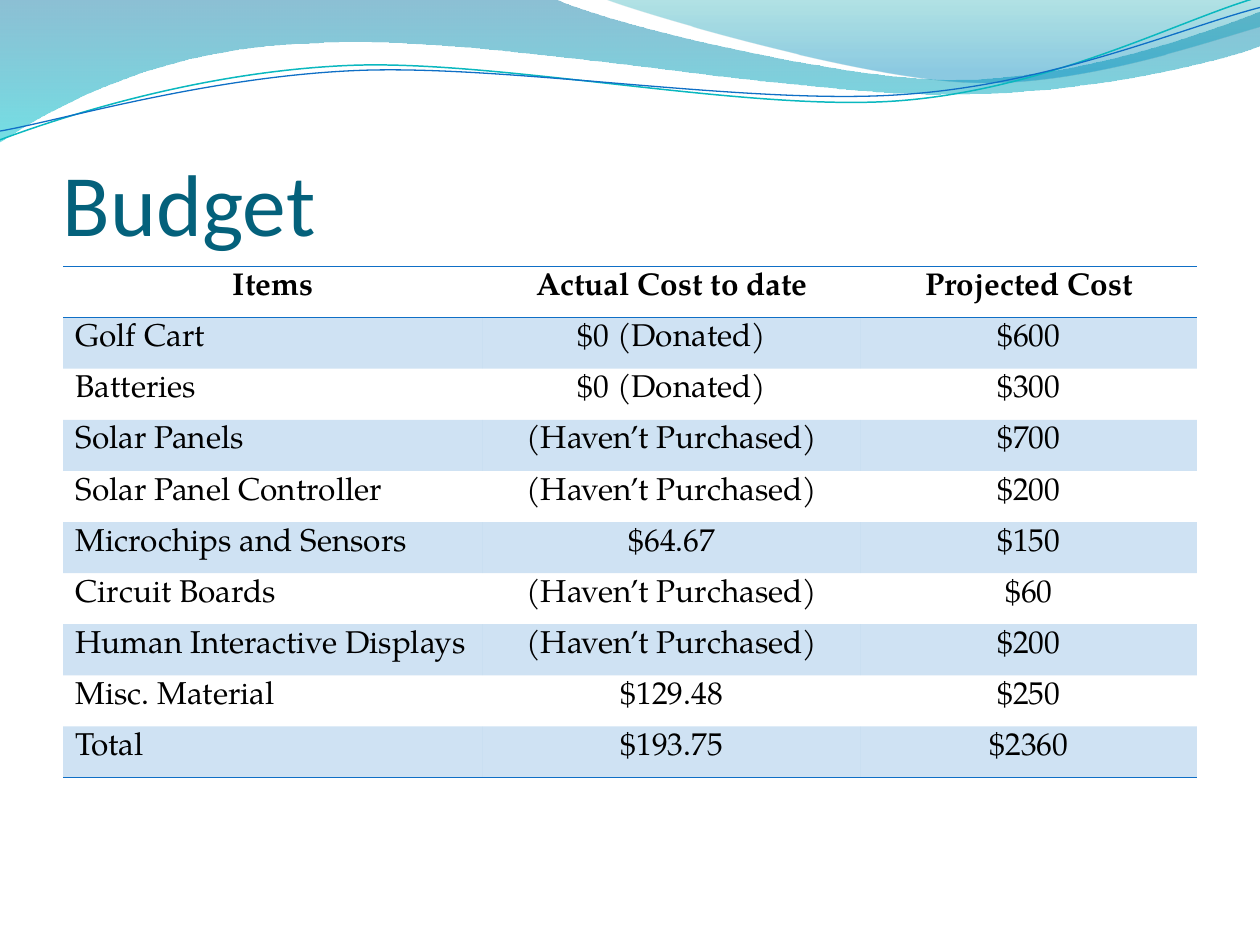
from math import cos, radians, sin
from lxml.etree import SubElement
from pptx import Presentation
from pptx.dml.color import RGBColor
from pptx.enum.text import MSO_ANCHOR, PP_ALIGN
from pptx.oxml.ns import qn
from pptx.util import Pt

BLUE = "0F6FC6"
PLAIN_TABLE = "{2D5ABB26-0587-4C30-8999-92F81FD0307C}"
TILT = -2.7

BANDS = [
    ([(0, 0), (316.8, -0.7), (342.7, 12.2, 478.1, 45.4, 545.8, 45.4),
      (614.2, 45.4, 689.8, 18.7, 720, 6.5), (720.7, 25.9),
      (707.8, 31.7, 626.4, 54.7, 537.1, 54), (447.8, 54, 275, 20.2, 185, 24.5),
      (92.9, 25.9, 33.1, 59.8, -0.7, 81.4)],
     [(0, "0074A1", 45), (1, "00C6CF", 55)]),
    ([(344.9, -0.7), (366.5, 7.9, 491, 44.6, 553.7, 46.8),
      (616.3, 49.7, 691.9, 23, 720, 15.1), (720, 0)],
     [(0, "00A1A9", 30), (0.8, "008BBF", 45)]),
]
STRANDS = [
    ([(0, 79.9), (34.6, 67, 113.8, 41, 199.4, 37.4),
      (284.4, 33.8, 427, 64.1, 513.4, 57.6),
      (599.8, 51.1, 675.4, 10.8, 718.6, -1.4)], (359.3, 41.4), "0AB8BF", 0.85),
    ([(0, 74.9), (33.8, 69.1, 118.1, 43.9, 203.8, 40.3),
      (290.2, 36.7, 429.8, 60.5, 516.2, 54),
      (601.9, 48.2, 677.5, 15.1, 720, 4.3)], (359.6, 42.5), BLUE, 0.75),
]
COLUMN_WIDTHS = [240, 216, 192]
BUDGET = [
    ("Items", "Actual Cost to date", "Projected Cost"),
    ("Golf Cart", "$0 (Donated)", "$600"),
    ("Batteries", "$0 (Donated)", "$300"),
    ("Solar Panels", "(Haven’t Purchased)", "$700"),
    ("Solar Panel Controller", "(Haven’t Purchased)", "$200"),
    ("Microchips and Sensors", "$64.67", "$150"),
    ("Circuit Boards", "(Haven’t Purchased)", "$60"),
    ("Human Interactive Displays", "(Haven’t Purchased)", "$200"),
    ("Misc. Material", "$129.48", "$250"),
    ("Total", "$193.75", "$2360"),
]
TITLE_FONT = {"name": "Calibri", "size": Pt(50), "bold": False}
CELL_FONT = {"name": "TeX Gyre Pagella", "size": Pt(18), "bold": False}
HEADER_FONT = {**CELL_FONT, "bold": True}


def color(value):
    return RGBColor.from_string(value)


def apply(target, values):
    for name, value in values.items():
        setattr(target, name, value)


def set_alpha(color_element, percent):
    SubElement(color_element, qn("a:alpha"), val=str(percent * 1000))


def write(frame, text, font, ink, align):
    para = frame.paragraphs[0]
    para.alignment = align
    span = para.add_run()
    span.text = text
    apply(span.font, font)
    span.font.color.rgb = color(ink)


def pairs(step):
    return list(zip(step[::2], step[1::2]))


def turn(path, center, angle):
    across, up = cos(radians(angle)), sin(radians(angle))
    turned = []
    for step in path:
        offsets = [(x - center[0], y - center[1]) for x, y in pairs(step)]
        turned.append(tuple(value for x, y in offsets for value in (
            center[0] + x * across - y * up, center[1] + x * up + y * across)))
    return turned


def bend(shape, steps):
    lines = iter(list(shape.element.spPr.iter(qn("a:lnTo"))))
    for step in steps:
        group = [next(lines) for _ in pairs(step)]
        if len(group) == 3:
            curve = group[0].makeelement(qn("a:cubicBezTo"), {})
            group[0].addprevious(curve)
            for line in group:
                curve.append(line[0])
                line.getparent().remove(line)


def add_outline(page, box, path, close):
    points = [(Pt(x), Pt(y)) for step in path for x, y in pairs(step)]
    builder = page.shapes.build_freeform(*points[0])
    builder.add_line_segments(points[1:], close=close)
    shape = builder.convert_to_shape(Pt(box[0]), Pt(box[1]))
    bend(shape, path[1:])
    shape.shadow.inherit = False
    return shape


def add_waves(page, box):
    for path, stops in BANDS:
        band = add_outline(page, box, path, True)
        band.line.fill.background()
        band.fill.gradient()
        band.fill.gradient_angle = 270
        for stop, (position, shade, alpha) in zip(band.fill.gradient_stops, stops):
            stop.position = position
            stop.color.rgb = color(shade)
        marks = list(band.element.spPr.iter(qn("a:srgbClr")))
        for mark, (position, shade, alpha) in zip(marks, stops):
            set_alpha(mark, alpha)
    for path, center, shade, width in STRANDS:
        strand = add_outline(page, box, turn(path, center, -TILT), False)
        strand.rotation = TILT
        strand.fill.background()
        strand.line.color.rgb = color(shade)
        strand.line.width = Pt(width)


def add_title(page, box):
    frame = page.shapes.add_textbox(*map(Pt, box)).text_frame
    apply(frame, {"word_wrap": True, "vertical_anchor": MSO_ANCHOR.BOTTOM,
                  "margin_left": 0, "margin_right": 0,
                  "margin_top": Pt(3.6), "margin_bottom": 0})
    write(frame, "Budget", TITLE_FONT, "04617B", PP_ALIGN.LEFT)


def add_border(cell, side, index):
    properties = cell._tc.get_or_add_tcPr()
    line = properties.makeelement(qn(f"a:{side}"), {"w": str(Pt(1))})
    SubElement(SubElement(line, qn("a:solidFill")), qn("a:srgbClr"), val=BLUE)
    properties.insert(index, line)


def style_cell(cell, banded, sides):
    if banded:
        cell.fill.solid()
        cell.fill.fore_color.rgb = color(BLUE)
        set_alpha(cell._tc.tcPr.find(".//" + qn("a:srgbClr")), 20)
    else:
        cell.fill.background()
    for index, side in enumerate(sides):
        add_border(cell, side, index)


def add_budget(page, box):
    table = page.shapes.add_table(
        len(BUDGET), len(COLUMN_WIDTHS), *map(Pt, box)).table
    table._tbl.tblPr.find(qn("a:tableStyleId")).text = PLAIN_TABLE
    for column, width in zip(table.columns, COLUMN_WIDTHS):
        column.width = Pt(width)
    borders = {0: ("lnT", "lnB"), len(BUDGET) - 1: ("lnB",)}
    for row, values in enumerate(BUDGET):
        table.rows[row].height = Pt(box[3] / len(BUDGET))
        for column, text in enumerate(values):
            cell = table.cell(row, column)
            left = row > 0 and column == 0
            write(cell.text_frame, text, CELL_FONT if row else HEADER_FONT, "000000",
                  PP_ALIGN.LEFT if left else PP_ALIGN.CENTER)
            style_cell(cell, row % 2 == 1, borders.get(row, ()))


def main():
    deck = Presentation()
    apply(deck, {"slide_width": Pt(720), "slide_height": Pt(540)})
    page = deck.slides.add_slide(deck.slide_layouts[6])
    add_waves(page, (0, 0, 720, 82))
    add_title(page, (36, 55, 648, 90))
    add_budget(page, (36, 152.3, 648, 292))
    deck.save("out.pptx")


if __name__ == "__main__":
    main()
